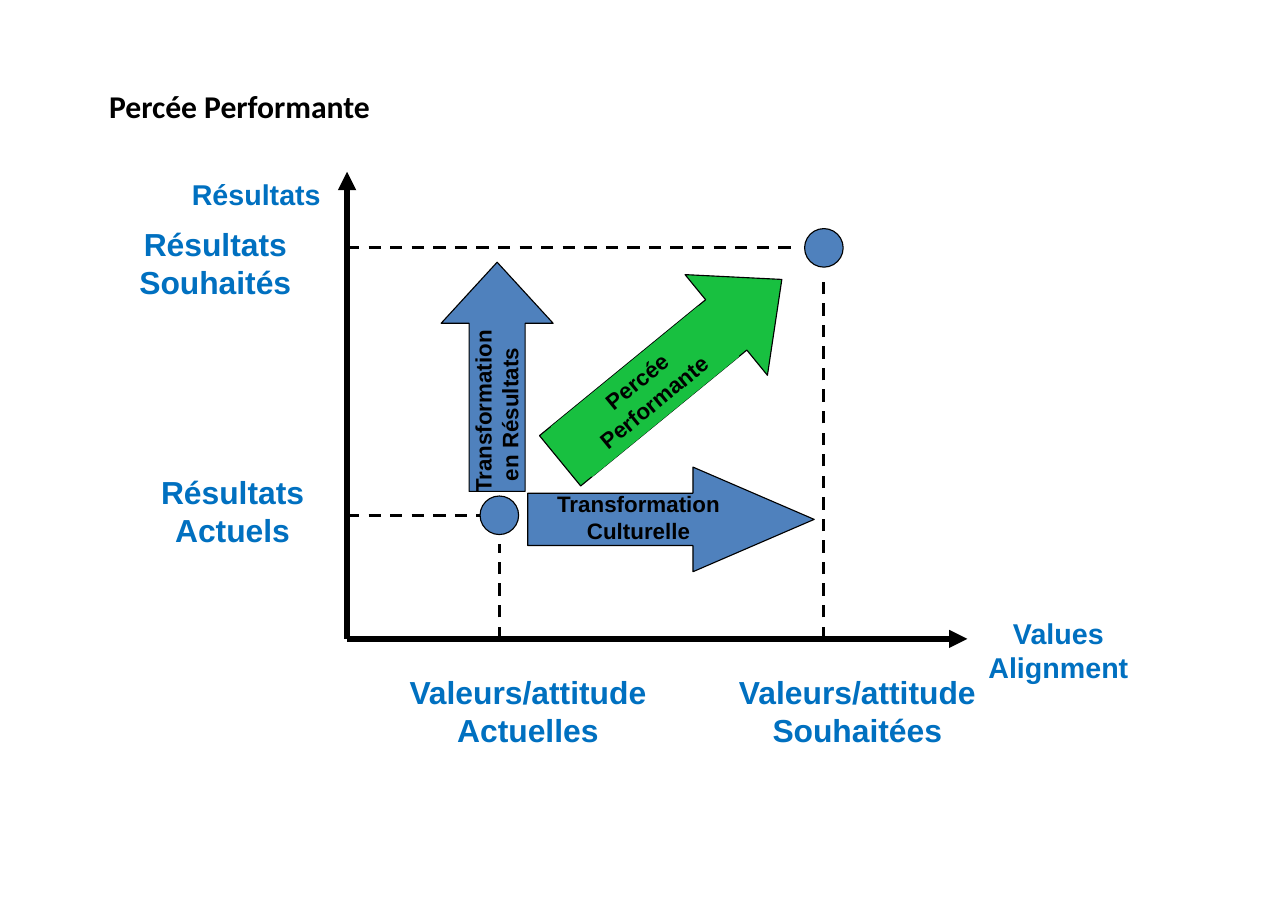
from dataclasses import dataclass

import pptx
import pptx.dml.color
import pptx.enum.dml
import pptx.enum.shapes
import pptx.enum.text
import pptx.oxml.ns
import pptx.util
from lxml import etree

Pt = pptx.util.Pt
PRESET = pptx.enum.shapes.MSO_SHAPE
COLORS = {"black": "000000", "label": "0070C0", "blue": "4F81BD", "green": "18C040"}
ORIGIN_X, ORIGIN_Y = 226.8, 417.6
CURRENT_X, CURRENT_Y = 326.3, 336.8
DESIRED_X, DESIRED_Y = 538.4, 162
DOT_SIZE = 25.2


@dataclass
class Line:
    x1: float
    y1: float
    x2: float
    y2: float
    is_axis: bool = False


@dataclass
class Arrow:
    left: float
    top: float
    width: float
    height: float
    head: float
    color: str
    rotation: float = 0


@dataclass
class Label:
    text: str
    left: float
    top: float
    width: float
    height: float
    size: float
    color: str = "label"
    rotation: float = 0
    fill: str = ""


LINES = [
    Line(ORIGIN_X, ORIGIN_Y, ORIGIN_X, 112.3, True),
    Line(ORIGIN_X, ORIGIN_Y, 632.2, ORIGIN_Y, True),
    Line(CURRENT_X, ORIGIN_Y, CURRENT_X, 355.7),
    Line(ORIGIN_X, CURRENT_Y, CURRENT_X - DOT_SIZE / 2, CURRENT_Y),
    Line(ORIGIN_X, DESIRED_Y, 519.8, DESIRED_Y),
    Line(DESIRED_X, ORIGIN_Y, DESIRED_X, 180.7),
]
DOTS = [(CURRENT_X, CURRENT_Y), (DESIRED_X, DESIRED_Y)]
ARROWS = [
    Arrow(344.9, 305.3, 187.2, 68.4, 1.158, "blue"),
    Arrow(344.9, 199.4, 187.2, 85, 0.552, "green", 320.7),
    Arrow(250, 209.7, 149.8, 73.2, 0.545, "blue", 270),
]
LABELS = [
    Label("Résultats Actuels", 95.8, 305.3, 112.3, 57.6, 20.8),
    Label("Valeurs/attitude Actuelles", 257.8, 436.3, 174.2, 57.6, 20.8),
    Label("Résultats Souhaités", 73.4, 143.3, 134.6, 57.6, 20.8),
    Label("Valeurs/attitude\vSouhaitées", 463.7, 436.3, 193, 57.6, 20.8),
    Label("Transformation Culturelle", 355, 316.8, 124.6, 42.5, 14.6, "black"),
    Label("Percée Performante", 359.3, 234.7, 124.6, 42.5, 14.6, "black", 320.7, "green"),
    Label("Transformation en Résultats ", 261.4, 247.7, 126, 42.5, 14.6, "black", 270),
    Label("Résultats", 95.8, 112.3, 143.3, 30.2, 18.7),
    Label("Values Alignment", 632.2, 398.9, 118.8, 52.6, 18.7),
]


def rgb(name: str) -> pptx.dml.color.RGBColor:
    return pptx.dml.color.RGBColor.from_string(COLORS[name])


def set_font(paragraph, family: str, size: float, color: str) -> None:
    paragraph.font.name = family
    paragraph.font.size = Pt(size)
    paragraph.font.bold = True
    paragraph.font.color.rgb = rgb(color)


def draw_line(slide, line: Line) -> None:
    connector = slide.shapes.add_connector(
        pptx.enum.shapes.MSO_CONNECTOR.STRAIGHT,
        Pt(line.x1), Pt(line.y1), Pt(line.x2), Pt(line.y2),
    )
    connector.line.color.rgb = rgb("black")
    connector.line.width = Pt(4 if line.is_axis else 2)
    if line.is_axis:
        outline = connector.line._get_or_add_ln()
        etree.SubElement(outline, pptx.oxml.ns.qn("a:tailEnd"), type="triangle")
    else:
        connector.line.dash_style = pptx.enum.dml.MSO_LINE.DASH
    etree.SubElement(connector._element.spPr, pptx.oxml.ns.qn("a:effectLst"))


def draw_shape(slide, preset, left: float, top: float, width: float, height: float, color: str):
    shape = slide.shapes.add_shape(preset, Pt(left), Pt(top), Pt(width), Pt(height))
    shape.shadow.inherit = False
    shape.fill.solid()
    shape.fill.fore_color.rgb = rgb(color)
    shape.line.color.rgb = rgb("black")
    shape.line.width = Pt(0.75)
    return shape


def draw_arrow(slide, arrow: Arrow) -> None:
    shape = draw_shape(
        slide, PRESET.RIGHT_ARROW, arrow.left, arrow.top, arrow.width, arrow.height, arrow.color
    )
    shape.adjustments[0] = 0.5
    shape.adjustments[1] = arrow.head
    shape.rotation = arrow.rotation


def draw_label(slide, label: Label) -> None:
    box = slide.shapes.add_textbox(
        Pt(label.left), Pt(label.top), Pt(label.width), Pt(label.height)
    )
    box.rotation = label.rotation
    if label.fill:
        box.fill.solid()
        box.fill.fore_color.rgb = rgb(label.fill)
    frame = box.text_frame
    frame.word_wrap = True
    frame.auto_size = pptx.enum.text.MSO_AUTO_SIZE.SHAPE_TO_FIT_TEXT
    paragraph = frame.paragraphs[0]
    paragraph.text = label.text
    paragraph.alignment = pptx.enum.text.PP_ALIGN.CENTER
    set_font(paragraph, "Arial", label.size, label.color)


def draw_title(slide) -> None:
    title = slide.shapes.title
    title.left, title.top, title.width, title.height = Pt(64.1), Pt(39.6), Pt(714.2), Pt(59)
    title.text_frame.text = "Percée Performante"
    title.text_frame.vertical_anchor = pptx.enum.text.MSO_ANCHOR.MIDDLE
    heading = title.text_frame.paragraphs[0]
    heading.alignment = pptx.enum.text.PP_ALIGN.LEFT
    set_font(heading, "Calibri", 20.7, "black")


def main() -> None:
    presentation = pptx.Presentation()
    presentation.slide_width, presentation.slide_height = Pt(841.68), Pt(595.44)
    slide = presentation.slides.add_slide(presentation.slide_layouts[5])
    draw_title(slide)
    for line in LINES:
        draw_line(slide, line)
    for x, y in DOTS:
        draw_shape(
            slide, PRESET.OVAL, x - DOT_SIZE / 2, y - DOT_SIZE / 2, DOT_SIZE, DOT_SIZE, "blue"
        )
    for arrow in ARROWS:
        draw_arrow(slide, arrow)
    for label in LABELS:
        draw_label(slide, label)
    presentation.save("out.pptx")


if __name__ == "__main__":
    main()
